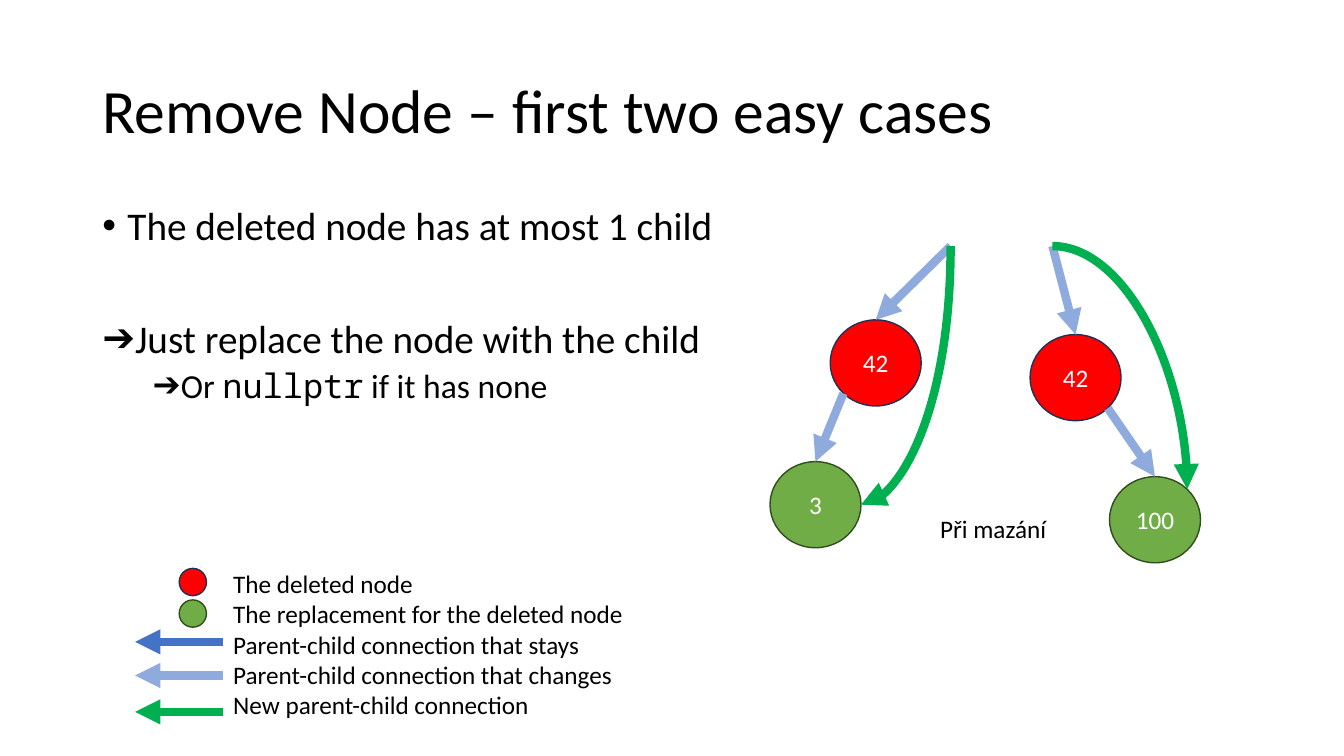
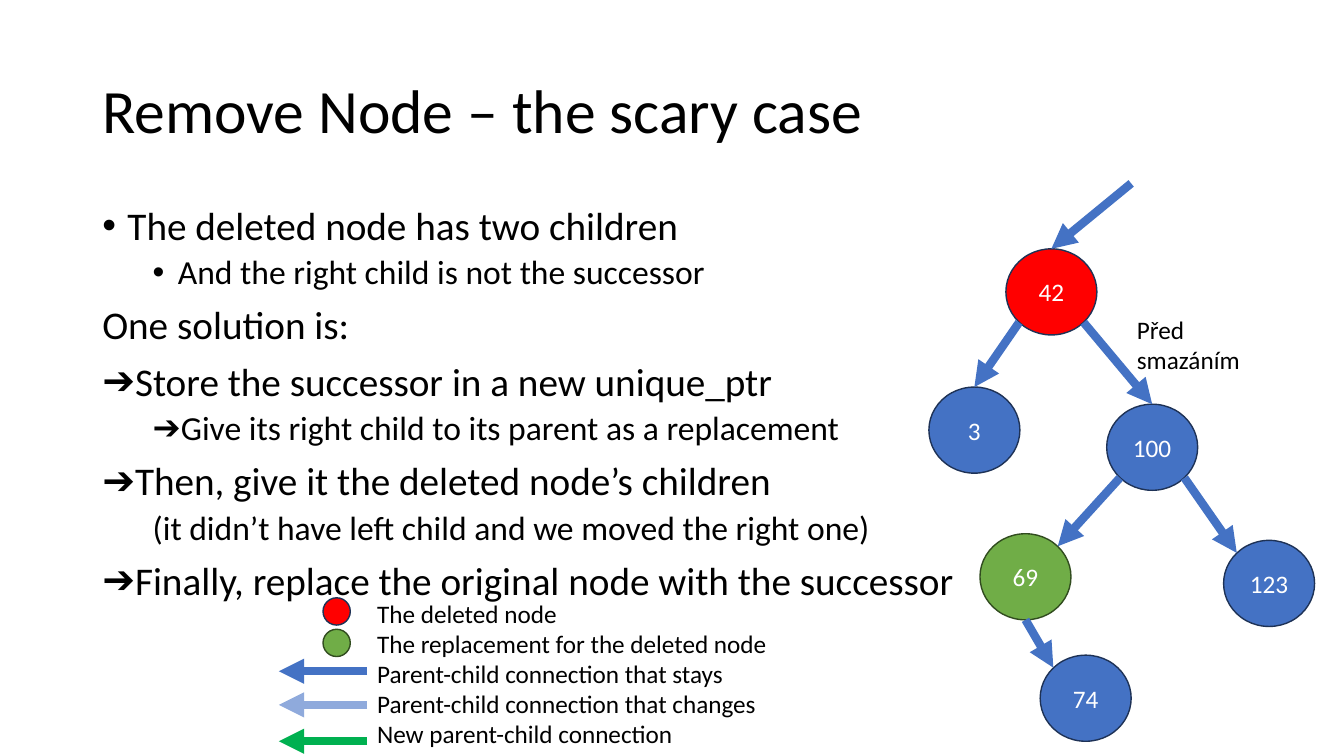
from dataclasses import dataclass
from enum import Enum

from lxml.etree import SubElement
from pptx import Presentation
from pptx.dml.color import RGBColor
from pptx.enum.shapes import MSO_CONNECTOR as CXN, MSO_SHAPE as SHAPE
from pptx.enum.text import MSO_ANCHOR as ANCHOR, PP_ALIGN as ALIGN
from pptx.oxml.ns import qn
from pptx.util import Pt

FONT, MONO = "Calibri", "Noto Sans Mono"
BLACK, WHITE = "000000", "FFFFFF"
RED, GREEN, BLUE = "FF0000", "70AD47", "4472C4"
CHANGES, NEW = "8FAADC", "00B050"
NAVY, DARK_GREEN = "1E3256", "314C1F"
NODE_W, NODE_H = 65, 61.5
DOT = 19.5
LEGEND = (
    "The deleted node",
    "The replacement for the deleted node",
    "Parent-child connection that stays",
    "Parent-child connection that changes",
    "New parent-child connection",
)
Point = tuple[float, float]


class Port(Enum):
    TOP = (0, 0, -1)
    TOP_LEFT = (1, -0.71, -0.71)
    BOTTOM_LEFT = (3, -0.71, 0.71)
    BOTTOM = (4, 0, 1)
    BOTTOM_RIGHT = (5, 0.71, 0.71)
    RIGHT = (6, 1, 0)
    TOP_RIGHT = (7, 0.71, -0.71)


@dataclass
class Node:
    label: str
    x: float
    y: float
    fill: str = BLUE

    def at(self, port: Port) -> Point:
        _, dx, dy = port.value
        return self.x + NODE_W / 2 * (1 + dx), self.y + NODE_H / 2 * (1 + dy)


@dataclass
class Edge:
    start: Point | tuple[int, Port]
    end: tuple[int, Port]
    color: str = BLUE
    curved: bool = False
    leaves_down: bool = False


@dataclass
class Line:
    runs: tuple[str | tuple[str, str], ...]
    bullet: str = "➔"
    level: int = 0
    gap: float = 0


@dataclass
class Page:
    title: str
    body: list[Line]
    nodes: list[Node]
    edges: list[Edge]
    legend: Point
    caption: str
    caption_at: Point


def rgb(value: str) -> RGBColor:
    return RGBColor.from_string(value)


def add_run(p, text: str, size: float, color: str = BLACK, font: str = FONT) -> None:
    r = p.add_run()
    r.text = text
    r.font.size, r.font.name = Pt(size), font
    r.font.color.rgb = rgb(color)


def text_frame(shapes, x: float, y: float, w: float, h: float, wrap: bool = True):
    tf = shapes.add_textbox(Pt(x), Pt(y), Pt(w), Pt(h)).text_frame
    tf.word_wrap = wrap
    return tf


def next_paragraph(tf, index: int):
    return tf.add_paragraph() if index else tf.paragraphs[0]


def circle(shapes, x: float, y: float, w: float, h: float, fill: str):
    sp = shapes.add_shape(SHAPE.OVAL, Pt(x), Pt(y), Pt(w), Pt(h))
    sp.shadow.inherit = False
    sp.fill.solid()
    sp.fill.fore_color.rgb = rgb(fill)
    sp.line.color.rgb = rgb(DARK_GREEN if fill == GREEN else NAVY)
    sp.line.width = Pt(1)
    return sp


def arrow(shapes, start: Point, end: Point, color: str, kind=CXN.STRAIGHT):
    c = shapes.add_connector(kind, *(Pt(v) for v in (*start, *end)))
    c.line.color.rgb = rgb(color)
    c.line.width = Pt(6)
    sp_pr = c._element.spPr
    SubElement(sp_pr.find(qn("a:ln")), qn("a:tailEnd"), type="triangle")
    SubElement(sp_pr, qn("a:effectLst"))
    return c


def curve(shapes, start: Point, end: Point, color: str, leaves_down: bool):
    (x1, y1), (x2, y2) = start, end
    if leaves_down:
        cx, cy = (x1 + x2) / 2, (y1 + y2) / 2
        dx, dy = abs(y2 - y1) / 2, abs(x2 - x1) / 2
        start, end = (cx - dx, cy - dy), (cx + dx, cy + dy)
    c = arrow(shapes, start, end, color, CXN.CURVE)
    sp_pr = c._element.spPr
    sp_pr.find(qn("a:prstGeom")).set("prst", "curvedConnector2")
    if leaves_down:
        sp_pr.find(qn("a:xfrm")).set("rot", str(90 * 60000))
    return c


def add_tree(shapes, nodes: list[Node], edges: list[Edge]) -> None:
    circles = []
    for node in nodes:
        sp = circle(shapes, node.x, node.y, NODE_W, NODE_H, node.fill)
        tf = sp.text_frame
        tf.vertical_anchor = ANCHOR.MIDDLE
        tf.word_wrap = False
        p = tf.paragraphs[0]
        p.alignment = ALIGN.CENTER
        add_run(p, node.label, 18, WHITE)
        circles.append(sp)
    for edge in edges:
        ends = [
            nodes[a].at(b) if isinstance(b, Port) else (a, b)
            for a, b in (edge.start, edge.end)
        ]
        if edge.curved:
            c = curve(shapes, *ends, edge.color, edge.leaves_down)
        else:
            c = arrow(shapes, *ends, edge.color)
        links = c._element.nvCxnSpPr.cNvCxnSpPr
        for tag, (a, b) in (("a:stCxn", edge.start), ("a:endCxn", edge.end)):
            if isinstance(b, Port):
                sp_id, site = circles[a].shape_id, b.value[0]
                SubElement(links, qn(tag), id=str(sp_id), idx=str(site))


def add_legend(slide, x: float, y: float) -> None:
    shapes = slide.shapes.add_group_shape().shapes
    for dy, color in ((106, NEW), (80, CHANGES), (56, BLUE)):
        arrow(shapes, (x, y + dy), (x - 63, y + dy), color)
    for i, fill in enumerate((RED, GREEN)):
        circle(shapes, x - 31.5, y + 3.5 + i * 22.5, DOT, DOT, fill)
    tf = text_frame(shapes, x, y, 300, 116.5, wrap=False)
    for i, entry in enumerate(LEGEND):
        add_run(next_paragraph(tf, i), entry, 18)


def add_title(slide, title: str) -> None:
    tf = text_frame(slide.shapes, 66, 28.75, 828, 104.4)
    tf.vertical_anchor = ANCHOR.MIDDLE
    p = tf.paragraphs[0]
    p.line_spacing = 0.9
    add_run(p, title, 44)


def add_body(slide, lines: list[Line]) -> None:
    tf = text_frame(slide.shapes, 66, 143.75, 828, 342.6)
    for i, line in enumerate(lines):
        p = next_paragraph(tf, i)
        p.line_spacing = 0.9
        p.space_before = Pt((5 if line.level else 10) + line.gap)
        hang = 18 if line.bullet else 0
        p_pr = p._p.get_or_add_pPr()
        p_pr.set("marL", str(Pt(36 * line.level + hang)))
        p_pr.set("indent", str(Pt(-hang)))
        if line.bullet:
            SubElement(p_pr, qn("a:buFont"), typeface="Arial")
            SubElement(p_pr, qn("a:buChar"), char=line.bullet)
        for part in line.runs:
            text, font = (part, FONT) if isinstance(part, str) else part
            add_run(p, text, 24 if line.level else 28, font=font)


def add_page(prs, page: Page) -> None:
    slide = prs.slides.add_slide(prs.slide_layouts[6])
    add_title(slide, page.title)
    add_body(slide, page.body)
    add_tree(slide.shapes, page.nodes, page.edges)
    add_legend(slide, *page.legend)
    tf = text_frame(slide.shapes, *page.caption_at, 100, 29, wrap=False)
    add_run(tf.paragraphs[0], page.caption, 18)


LEFT_PARENT, RIGHT_PARENT = (679, 175.75), (751.75, 175.75)
PAGES = [
    Page(
        "Remove Node – first two easy cases",
        [
            Line(("The deleted node has at most 1 child",), "•"),
            Line(("Just replace the node with the child",), gap=40.8),
            Line(("Or ", ("nullptr", MONO), " if it has none"), level=1),
        ],
        [
            Node("42", 593, 228.5, RED),
            Node("3", 550, 329.75, GREEN),
            Node("42", 735.75, 239, RED),
            Node("100", 792.5, 340.5, GREEN),
        ],
        [
            Edge((0, Port.BOTTOM_LEFT), (1, Port.TOP), CHANGES),
            Edge((2, Port.BOTTOM_RIGHT), (3, Port.TOP), CHANGES),
            Edge(LEFT_PARENT, (0, Port.TOP), CHANGES),
            Edge(RIGHT_PARENT, (2, Port.TOP), CHANGES),
            Edge(LEFT_PARENT, (1, Port.RIGHT), NEW, True, True),
            Edge(RIGHT_PARENT, (3, Port.TOP_RIGHT), NEW, True),
        ],
        (159.5, 402.5),
        "Při mazání",
        (664.5, 363),
    ),
    Page(
        "Remove Node – the scary case",
        [
            Line(("The deleted node has two children",), "•"),
            Line(("And the right child is not the successor",), "•", 1),
            Line(("One solution is:",), ""),
            Line(("Store the successor in a new unique_ptr",)),
            Line(("Give its right child to its parent as a replacement",), level=1),
            Line(("Then, give it the deleted node’s children",)),
            Line(("(it didn’t have left child and we moved the right one)",), "", 1),
            Line(("Finally, replace the original node with the successor",)),
        ],
        [
            Node("42", 718.5, 177.75, RED),
            Node("3", 663.5, 276.5),
            Node("100", 790.5, 288.75),
            Node("69", 700, 381.25, GREEN),
            Node("123", 874, 386),
            Node("74", 743, 468),
        ],
        [
            Edge((0, Port.BOTTOM_LEFT), (1, Port.TOP)),
            Edge((0, Port.BOTTOM_RIGHT), (2, Port.TOP)),
            Edge((2, Port.BOTTOM_LEFT), (3, Port.TOP_RIGHT)),
            Edge((2, Port.BOTTOM_RIGHT), (4, Port.TOP_LEFT)),
            Edge((3, Port.BOTTOM), (5, Port.TOP_LEFT)),
            Edge((808, 131), (0, Port.TOP)),
        ],
        (262.25, 423.5),
        "Před smazáním",
        (805, 221),
    ),
]


def main() -> None:
    prs = Presentation()
    prs.slide_width, prs.slide_height = Pt(960), Pt(540)
    for page in PAGES:
        add_page(prs, page)
    prs.save("out.pptx")


if __name__ == "__main__":
    main()
